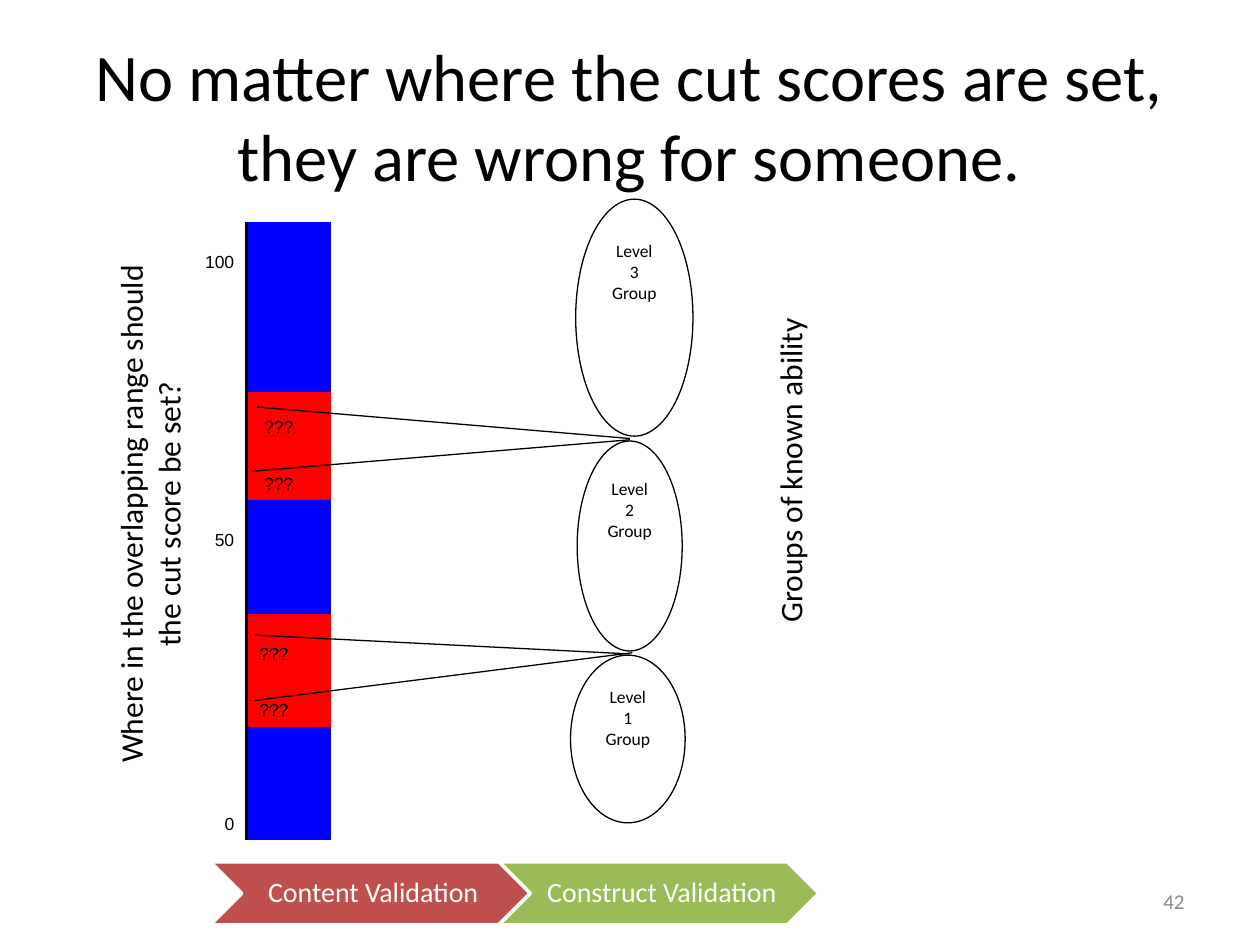
from pptx import Presentation
from pptx.util import Pt
from pptx.dml.color import RGBColor
from pptx.enum.shapes import MSO_CONNECTOR, MSO_SHAPE
from pptx.enum.text import MSO_ANCHOR, MSO_AUTO_SIZE, PP_ALIGN
from pptx.oxml import parse_xml
from pptx.oxml.ns import nsdecls, qn
from lxml import etree

BLACK = RGBColor(0x00, 0x00, 0x00)
WHITE = RGBColor(0xFF, 0xFF, 0xFF)
BLUE = RGBColor(0x00, 0x00, 0xFF)
RED = RGBColor(0xFF, 0x00, 0x00)
BRICK = RGBColor(0xC0, 0x50, 0x4D)
GREEN = RGBColor(0x9B, 0xBB, 0x59)
GRAY = RGBColor(0x8C, 0x8C, 0x8C)


def write(tf, text, size, color, align, font="Calibri"):
    p = tf.paragraphs[0]
    p.text = text
    p.alignment = align
    p.font.size = Pt(size)
    p.font.name = font
    p.font.color.rgb = color
    return p


def add_shape(kind, x, y, w, h, fill, line, width):
    sp = slide.shapes.add_shape(kind, Pt(x), Pt(y), Pt(w), Pt(h))
    sp.shadow.inherit = False
    sp.fill.solid()
    sp.fill.fore_color.rgb = fill
    sp.line.color.rgb = line
    sp.line.width = Pt(width)
    return sp


prs = Presentation()
prs.slide_width, prs.slide_height = Pt(720), Pt(540)
slide = prs.slides.add_slide(prs.slide_layouts[5])

title = slide.shapes.title
title.left, title.top, title.width, title.height = Pt(23), Pt(10), Pt(673), Pt(111.6)
tf = title.text_frame
tf.auto_size = MSO_AUTO_SIZE.NONE
tf.vertical_anchor = MSO_ANCHOR.MIDDLE
write(tf, "No matter where the cut scores are set, they are wrong for someone.",
      38, BLACK, PP_ALIGN.CENTER)

scores = {0: "100", 5: "50", 10: "0"}
overlaps = {3: "\u00a0???".replace("\u00a0", " "), 4: " ???", 7: "???", 8: "???"}
frame = slide.shapes.add_table(11, 2, Pt(93), Pt(126.7), Pt(96), Pt(353.5))
table = frame.table
table.first_row = table.horz_banding = False
style = table._tbl.tblPr.find(qn("a:tableStyleId"))
style.text = "{2D5ABB26-0587-4C30-8999-92F81FD0307C}"
for col in table.columns:
    col.width = Pt(48)
for i, row in enumerate(table.rows):
    row.height = Pt(29.5 if i == 3 else 32.4)
    score, band = row.cells
    score.fill.background()
    band.fill.solid()
    band.fill.fore_color.rgb = RED if i in overlaps else BLUE
    for cell, text, align, side in (
            (score, scores.get(i, ""), PP_ALIGN.RIGHT, "lnR"),
            (band, overlaps.get(i, ""), PP_ALIGN.LEFT, "lnL")):
        cell.vertical_anchor = MSO_ANCHOR.BOTTOM
        write(cell.text_frame, text, 10, BLACK, align, "Arial")
        cell._tc.tcPr.insert(0, parse_xml(
            f'<a:{side} {nsdecls("a")} w="25400"><a:solidFill>'
            f'<a:srgbClr val="{BLACK}"/></a:solidFill></a:{side}>'))

for level, x, y, w, h in (
        (3, 329, 113.8, 67, 135.4),
        (2, 329.8, 252, 60, 120),
        (1, 326, 374.4, 65.5, 95.8)):
    sp = add_shape(MSO_SHAPE.OVAL, x, y, w, h, WHITE, BLACK, 0.75)
    sp.text_frame.vertical_anchor = MSO_ANCHOR.TOP
    write(sp.text_frame, f"Level\v{level}\vGroup", 10, BLACK, PP_ALIGN.CENTER)

for x1, y1, x2, y2 in (
        (360, 251.3, 144, 269.3),
        (361.4, 373, 145.4, 400.3),
        (360, 250.6, 146.9, 232.6),
        (360, 373.7, 145.4, 362.9)):
    line = slide.shapes.add_connector(MSO_CONNECTOR.STRAIGHT, Pt(x1), Pt(y1), Pt(x2), Pt(y2))
    line.line.color.rgb = BLACK
    line.line.width = Pt(0.75)
    etree.SubElement(line._element.spPr, qn("a:effectLst"))

question = slide.shapes.add_textbox(Pt(-70.6), Pt(268.6), Pt(311.8), Pt(50.4))
question.rotation = 270
question.text_frame.word_wrap = True
write(question.text_frame, "Where in the overlapping range should the cut score be set?",
      18, BLACK, PP_ALIGN.CENTER)

groups = slide.shapes.add_textbox(Pt(437), Pt(180), Pt(36), Pt(183))
groups.text_frame._txBody.bodyPr.set("vert", "vert270")
write(groups.text_frame, "Groups of known ability", 18, BLACK, PP_ALIGN.LEFT)

for i, (text, color) in enumerate((("Content Validation", BRICK),
                                   ("Construct Validation", GREEN))):
    x = 120.2 + i * 164.9
    add_shape(MSO_SHAPE.CHEVRON, x, 492.5, 182.9, 36, color, WHITE, 2)
    label = slide.shapes.add_textbox(Pt(x + 18), Pt(492.5), Pt(146.9), Pt(36))
    tf = label.text_frame
    tf.word_wrap = True
    tf.vertical_anchor = MSO_ANCHOR.MIDDLE
    tf.margin_left = Pt(5)
    tf.margin_top = tf.margin_right = tf.margin_bottom = Pt(1.6)
    p = write(tf, text, 16, WHITE, PP_ALIGN.CENTER)
    p.line_spacing = 0.9

number = slide.shapes.add_textbox(Pt(516), Pt(500.5), Pt(168), Pt(28.8))
number.text_frame.word_wrap = True
number.text_frame.vertical_anchor = MSO_ANCHOR.MIDDLE
write(number.text_frame, "42", 12, GRAY, PP_ALIGN.RIGHT)

prs.save("out.pptx")
